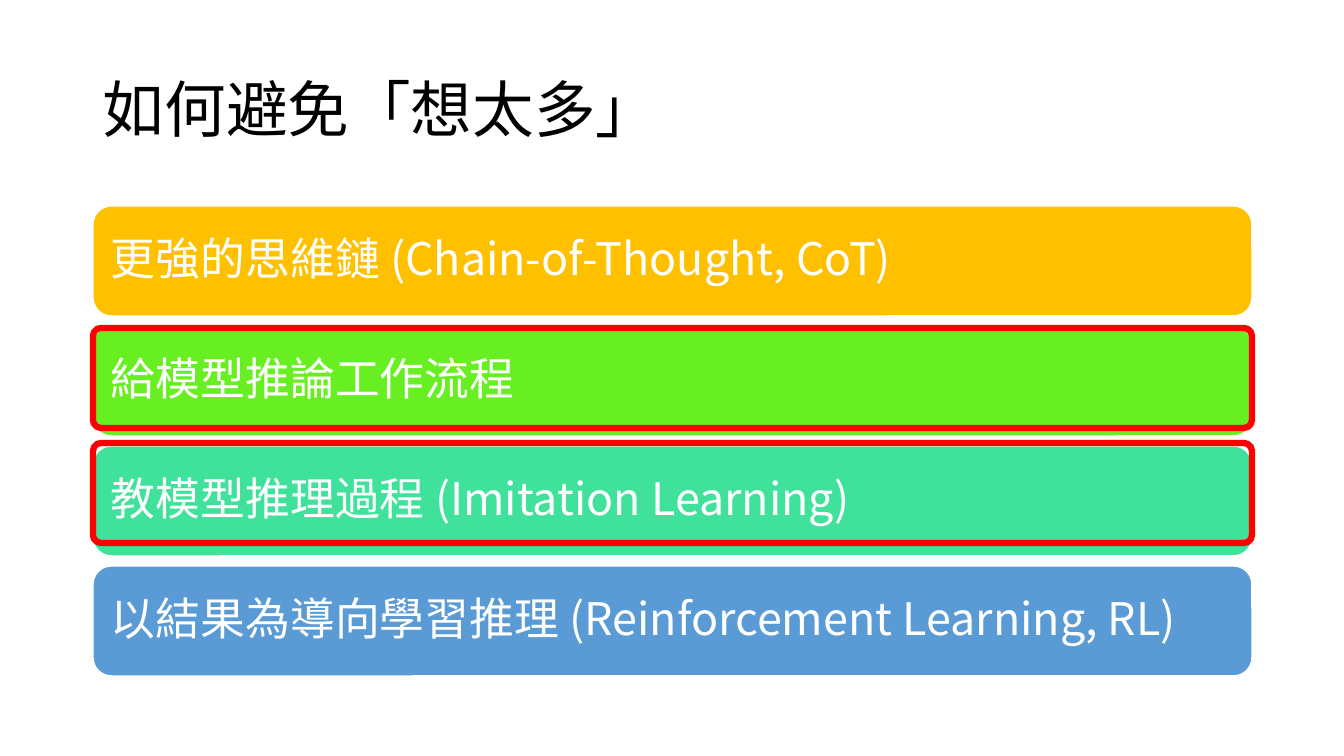
from lxml.etree import SubElement
from pptx import Presentation
from pptx.dml.color import RGBColor
from pptx.enum.shapes import MSO_SHAPE as Preset
from pptx.enum.text import MSO_ANCHOR as Anchor, PP_ALIGN as Align
from pptx.oxml.ns import qn
from pptx.util import Emu, Pt

COLORS = {
    "ink": "000000",
    "white": "FFFFFF",
    "amber": "FFC000",
    "lime": "67EF21",
    "mint": "3FE19B",
    "blue": "5B9BD5",
    "red": "FF0000",
}
METHODS = [
    ("更強的思維鏈 (Chain-of-Thought, CoT)", "amber"),
    ("給模型推論工作流程", "lime"),
    ("教模型推理過程 (Imitation Learning)", "mint"),
    ("以結果為導向學習推理 (Reinforcement Learning, RL)", "blue"),
]
LEFT, WIDTH = 93, 1159
BAR_TOP, BAR_HEIGHT, BAR_STEP = 206, 110, 120
FRAME_TOP, FRAME_HEIGHT, FRAME_STEP = 328, 100, 115
LABEL_INSET = 5


def px(count):
    return Emu(round(count * 914400 / 100.8))


def color(name):
    return RGBColor.from_string(COLORS[name])


class SlideWriter:
    font = "Noto Sans CJK SC"

    def __init__(self, page):
        self.page = page

    def text(self, words, area, size, ink, inset):
        box = self.page.shapes.add_textbox(*map(px, area))
        frame = box.text_frame
        frame.word_wrap = True
        frame.vertical_anchor = Anchor.MIDDLE
        frame.margin_left = frame.margin_right = px(inset[0])
        frame.margin_top = frame.margin_bottom = px(inset[1])
        para = frame.paragraphs[0]
        para.alignment = Align.LEFT
        para.line_spacing = 0.9
        span = para.add_run()
        span.text = words
        span.font.size = Pt(size)
        span.font.name = self.font
        span.font.color.rgb = color(ink)
        SubElement(span.font._element, qn("a:ea"), typeface=self.font)

    def rounded(self, area, line, weight, fill=None, corner=None):
        shape = self.page.shapes.add_shape(Preset.ROUNDED_RECTANGLE, *map(px, area))
        shape.shadow.inherit = False
        if fill:
            shape.fill.solid()
            shape.fill.fore_color.rgb = color(fill)
        else:
            shape.fill.background()
        shape.line.color.rgb = color(line)
        shape.line.width = Pt(weight)
        if corner is not None:
            shape.adjustments[0] = corner


def main():
    deck = Presentation()
    deck.slide_width, deck.slide_height = px(1344), px(756)
    writer = SlideWriter(deck.slides.add_slide(deck.slide_layouts[6]))

    writer.text("如何避免「想太多」", (LEFT, 40, WIDTH, 146), 44, "ink", (10, 5))

    for index, (words, fill) in enumerate(METHODS):
        top = BAR_TOP + index * BAR_STEP
        writer.rounded((LEFT, top, WIDTH, BAR_HEIGHT), "white", 1, fill)
        label = (
            LEFT + LABEL_INSET,
            top + LABEL_INSET,
            WIDTH - 2 * LABEL_INSET,
            BAR_HEIGHT - 2 * LABEL_INSET,
        )
        writer.text(words, label, 32, "white", (13, 13))

    for index in range(2):
        top = FRAME_TOP + index * FRAME_STEP
        writer.rounded((LEFT, top, WIDTH, FRAME_HEIGHT), "red", 4.5, corner=0.08)

    deck.save("out.pptx")


if __name__ == "__main__":
    main()
